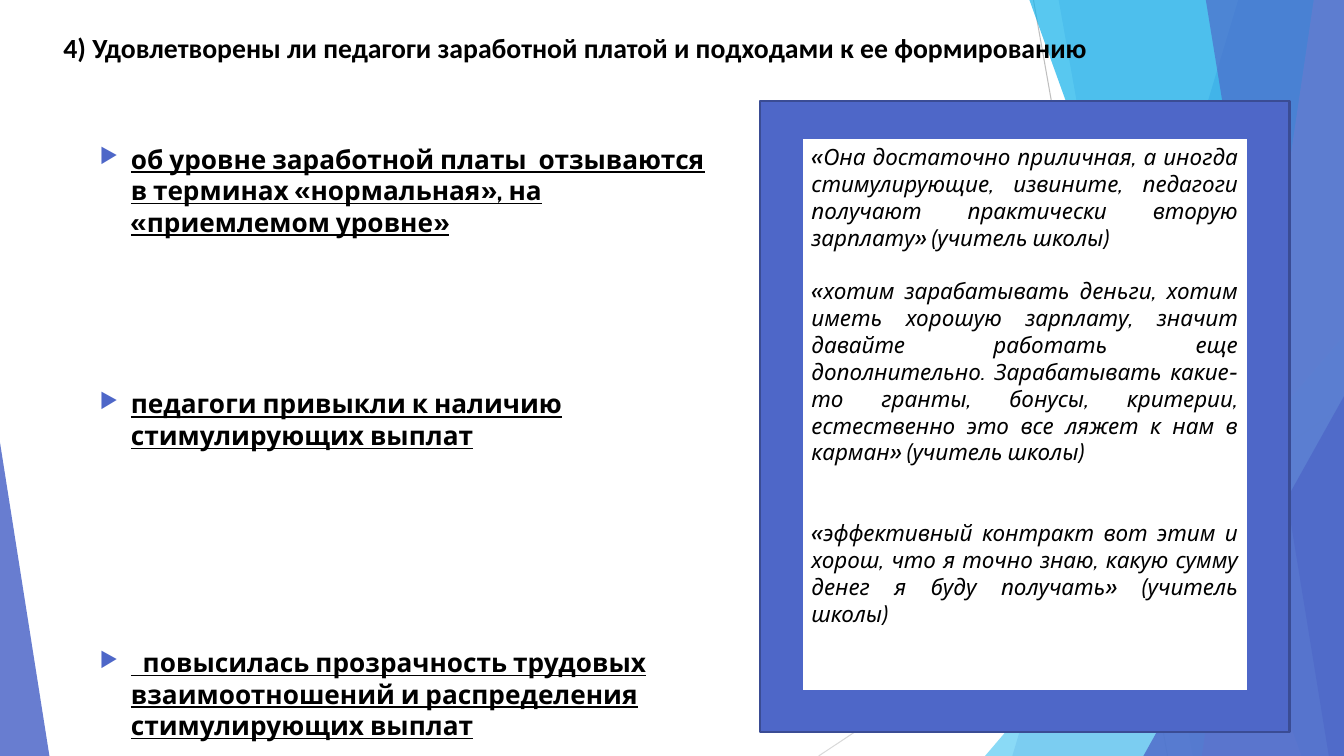
from lxml import etree
from pptx import Presentation
from pptx.dml.color import RGBColor
from pptx.enum import shapes, text
from pptx.oxml.ns import qn
from pptx.util import Inches, Pt

COLORS = {
    "blue": "4E67C8", "navy": "3A4C94", "sky": "5ECCF3", "cyan": "12B2EB",
    "lilac": "95A4DE", "gray": "BFBFBF", "pale gray": "D9D9D9",
    "black": "000000", "white": "FFFFFF",
}
WIDTH, HEIGHT = 13.33, 7.5


def paint(shape, fill, opacity=100, line=None):
    """Fill a shape, with opacity in percent, and outline it if a line colour is given."""
    shape.shadow.inherit = False
    shape.fill.solid()
    shape.fill.fore_color.rgb = RGBColor.from_string(COLORS[fill])
    if opacity < 100:
        color = shape._element.spPr.find(".//" + qn("a:srgbClr"))
        etree.SubElement(color, qn("a:alpha"), val=str(opacity * 1000))
    if line:
        shape.line.color.rgb = RGBColor.from_string(COLORS[line])
        shape.line.width = Pt(1.5)
    else:
        shape.line.fill.background()


def write(frame, paragraphs, font_name, size, bold=False, italic=False, underline=False):
    """Write (text, space before in points) pairs into a top-anchored frame."""
    frame.word_wrap = True
    frame.vertical_anchor = text.MSO_ANCHOR.TOP
    for index, (words, space) in enumerate(paragraphs):
        paragraph = frame.add_paragraph() if index else frame.paragraphs[0]
        paragraph.text = words
        paragraph.space_before = Pt(space)
        paragraph.alignment = text.PP_ALIGN.LEFT
        font = paragraph.font
        font.name, font.size = font_name, Pt(size)
        font.bold, font.italic, font.underline = bold, italic, underline
        font.color.rgb = RGBColor.from_string(COLORS["black"])


prs = Presentation()
prs.slide_width, prs.slide_height = Inches(WIDTH), Inches(HEIGHT)
slide = prs.slides.add_slide(prs.slide_layouts[6])

# Thin lines behind the facets
for x1, y1, x2, y2, color in [
    (10.25, 0, 11.58, HEIGHT, "gray"),
    (WIDTH, 4.03, 8.12, HEIGHT, "pale gray"),
]:
    ray = slide.shapes.add_connector(
        shapes.MSO_CONNECTOR.STRAIGHT, Inches(x1), Inches(y1), Inches(x2), Inches(y2))
    ray.line.color.rgb = RGBColor.from_string(COLORS[color])
    ray.line.width = Pt(0.75)
    etree.SubElement(ray._element.spPr, qn("a:effectLst"))

# Facets: a band is (top x, bottom x) and runs to the right edge,
# a triangle is (left, top, width, apex) and stands on the bottom edge
for outline, color, opacity in [
    ((12.28, 10.04), "blue", 30),
    ((10.5, 11.83), "blue", 20),
    ((9.77, 3.33, 3.56, 1), "sky", 72),
    ((10.21, 12.91), "cyan", 70),
    ((13.03, 11.92), "lilac", 70),
    ((11.96, 13.18), "blue", 65),
    ((11.34, 3.93, 1.99, 1), "blue", 80),
    ((0, 4.39, 0.49, 0), "blue", 85),
]:
    if len(outline) == 2:
        top_x, bottom_x = outline
        builder = slide.shapes.build_freeform(Inches(top_x), 0)
        builder.add_line_segments([
            (Inches(x), Inches(y))
            for x, y in [(WIDTH, 0), (WIDTH, HEIGHT), (bottom_x, HEIGHT)]])
        facet = builder.convert_to_shape()
    else:
        left, top, width, apex = outline
        facet = slide.shapes.add_shape(
            shapes.MSO_SHAPE.ISOSCELES_TRIANGLE,
            Inches(left), Inches(top), Inches(width), Inches(HEIGHT - top))
        facet.adjustments[0] = apex
    paint(facet, color, opacity)

title = slide.shapes.add_textbox(Inches(0.53), Inches(0.26), Inches(12.43), Inches(0.74))
write(title.text_frame,
      [("4) Удовлетворены ли педагоги заработной платой и подходами к ее формированию", 0)],
      "Calibri", 19.8, bold=True)

findings = slide.shapes.add_textbox(Inches(0.39), Inches(1.37), Inches(6.91), Inches(5.34))
write(findings.text_frame, [
    ("об уровне заработной платы  отзываются в терминах «нормальная», на «приемлемом уровне»", 0),
    ("педагоги привыкли к наличию стимулирующих выплат", 107.5),
    ("  повысилась прозрачность трудовых взаимоотношений и распределения стимулирующих выплат", 140),
], "Cabin", 18.7, bold=True, underline=True)
for finding in findings.text_frame.paragraphs:
    props = finding._p.get_or_add_pPr()
    props.set("marL", str(Inches(0.81)))
    props.set("indent", str(Inches(-0.31)))
    bullet_color = etree.Element(qn("a:buClr"))
    etree.SubElement(bullet_color, qn("a:srgbClr"), val=COLORS["blue"])
    bullet_size = etree.Element(qn("a:buSzPct"), val="80000")
    bullet = etree.Element(qn("a:buChar"), char="▶")
    defaults = props.find(qn("a:defRPr"))
    for part in (bullet_color, bullet_size, bullet):
        defaults.addprevious(part)

frame_panel = slide.shapes.add_shape(
    shapes.MSO_SHAPE.RECTANGLE, Inches(7.54), Inches(1), Inches(5.25), Inches(6.26))
paint(frame_panel, "blue", line="navy")

quotes = slide.shapes.add_shape(
    shapes.MSO_SHAPE.RECTANGLE, Inches(7.95), Inches(1.37), Inches(4.43), Inches(5.49))
paint(quotes, "white", line="blue")
write(quotes.text_frame, [
    ("«Она достаточно приличная, а иногда стимулирующие, извините, педагоги получают "
     "практически вторую зарплату» (учитель школы)", 0),
    ("«хотим зарабатывать деньги, хотим иметь хорошую зарплату, значит давайте работать еще "
     "дополнительно. Зарабатывать какие-то гранты, бонусы, критерии, естественно это все "
     "ляжет к нам в карман» (учитель школы)", 19.2),
    ("«эффективный контракт вот этим и хорош, что я точно знаю, какую сумму денег я буду "
     "получать» (учитель школы)", 38.4),
], "Cabin", 16, italic=True)
for quote in quotes.text_frame.paragraphs:
    quote.alignment = text.PP_ALIGN.JUSTIFY

prs.save("out.pptx")
